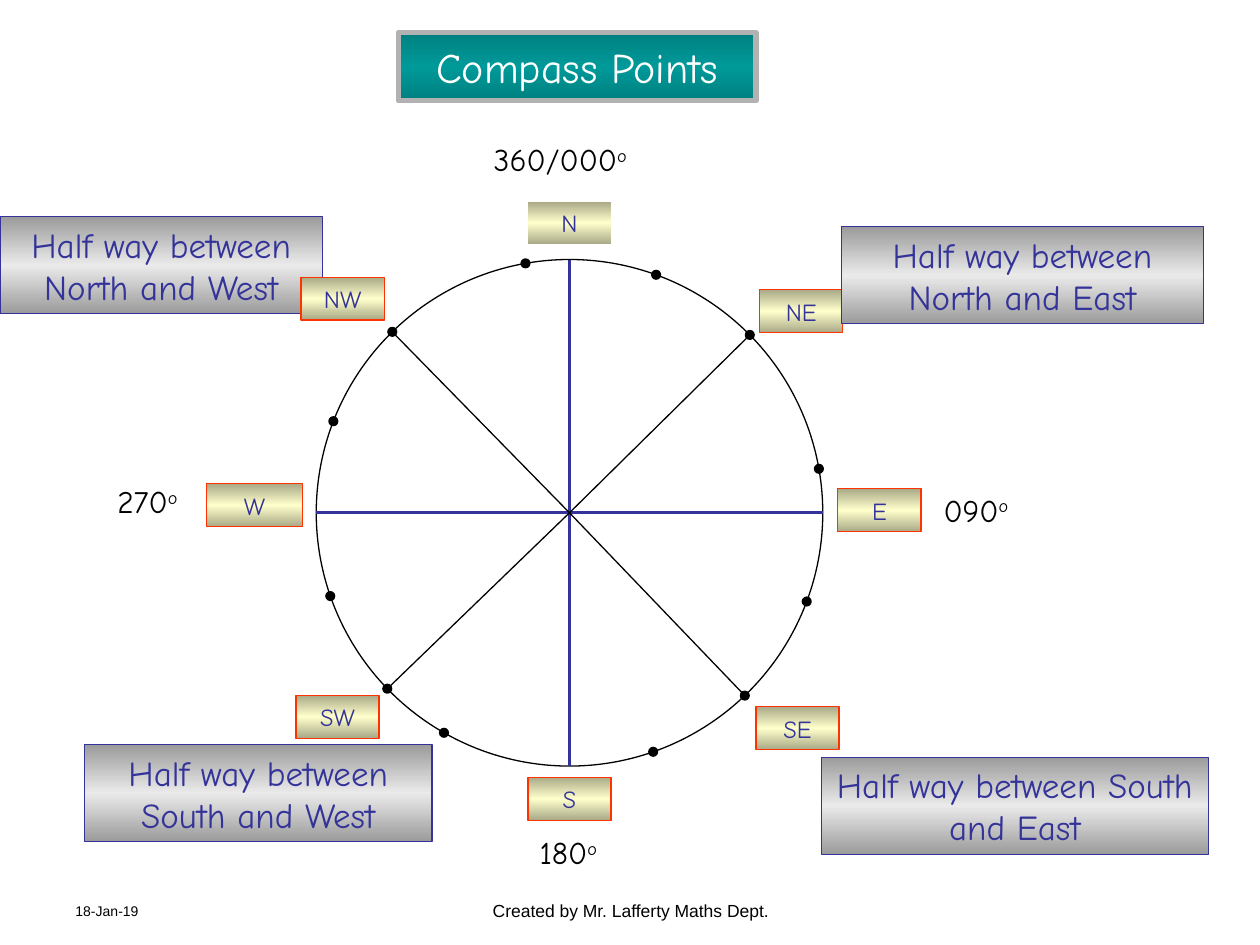
from copy import deepcopy
from math import cos, radians, sin

from lxml import etree
from pptx import Presentation
from pptx.dml.color import RGBColor
from pptx.enum.shapes import MSO_CONNECTOR, MSO_SHAPE
from pptx.enum.text import MSO_ANCHOR, MSO_AUTO_SIZE, PP_ALIGN
from pptx.oxml.ns import qn
from pptx.util import Inches, Pt

LEFT, CENTER = PP_ALIGN.LEFT, PP_ALIGN.CENTER
MIDDLE = MSO_ANCHOR.MIDDLE
NO_FIT = MSO_AUTO_SIZE.NONE
RECT, OVAL = MSO_SHAPE.RECTANGLE, MSO_SHAPE.OVAL
STRAIGHT = MSO_CONNECTOR.STRAIGHT

# Content
TITLE = "Compass Points"
COMIC, PLAIN = "Comic Neue", "Arial"
COLORS = {
    "black": "000000", "white": "FFFFFF", "navy": "333399", "red": "FF3300",
    "frame": "B2B2B2", "teal": "008080", "bright teal": "009999",
    "khaki": "A9A987", "cream": "FFFFCC", "gray": "9B9B9B", "silver": "EAEAEA",
}
# kind: edge colour, middle colour, text size, height
BOX_STYLES = {
    "point": ("khaki", "cream", 14, 0.34),
    "note": ("gray", "silver", 20, 0.77),
}
# kind, text, left, top, width, line colour (back to front)
BOXES = [
    ("point", "N", 4.19, 1.6, 0.66, None),
    ("point", "S", 4.19, 6.17, 0.66, "red"),
    ("point", "E", 6.65, 3.88, 0.66, "red"),
    ("point", "W", 1.64, 3.84, 0.76, "red"),
    ("point", "SE", 6, 5.61, 0.66, "red"),
    ("note", "Half way between South and East", 6.52, 6.01, 3.07, "navy"),
    ("point", "SW", 2.35, 5.52, 0.66, "red"),
    ("note", "Half way between South and West", 0.67, 5.91, 2.76, "navy"),
    ("note", "Half way between North and West", 0, 1.72, 2.56, "navy"),
    ("point", "NW", 2.39, 2.2, 0.66, "red"),
    ("point", "NE", 6.03, 2.3, 0.66, "red"),
    ("note", "Half way between North and East", 6.68, 1.8, 2.87, "navy"),
]
# degrees, left, top, width, alignment
BEARING_LABELS = [
    ("090", 7.39, 3.84, 0.82, LEFT),
    ("360/000", 3.82, 1.06, 1.37, LEFT),
    ("270", 0.76, 3.77, 0.82, CENTER),
    ("180", 4.1, 6.56, 0.82, CENTER),
]
# text, left, width, size, alignment
FOOTERS = [
    ("18-Jan-19", 0.5, 2.33, 8, LEFT),
    ("Created by Mr. Lafferty Maths Dept.", 3.42, 3.17, 10, CENTER),
]

# Compass geometry; bearings run clockwise from north
CENTER_X, CENTER_Y, RADIUS, DOT = 4.52, 4.07, 2.01, 0.07
DIAGONALS = [45.4, 136.2, 226, 315.6]
MINOR_POINTS = [20, 80, 110.5, 160.7, 209.7, 250.8, 291.2, 350]

prs = Presentation()
prs.slide_width, prs.slide_height = Inches(10), Inches(7.5)
slide = prs.slides.add_slide(prs.slide_layouts[5])


def color(name):
    return RGBColor.from_string(COLORS[name])


def inches(*values):
    return [Inches(value) for value in values]


def on_circle(bearing):
    angle = radians(bearing)
    return CENTER_X + RADIUS * sin(angle), CENTER_Y - RADIUS * cos(angle)


def write(shape, runs, size, ink, font=COMIC, align=CENTER):
    """Fill a shape with one paragraph of (text, raised) runs."""
    frame = shape.text_frame
    frame.word_wrap, frame.auto_size = True, NO_FIT
    frame.vertical_anchor = MIDDLE
    paragraph = frame.paragraphs[0]
    paragraph.alignment = align
    for text, raised in runs:
        run = paragraph.add_run()
        run.text = text
        run.font.size, run.font.name = Pt(size), font
        run.font.color.rgb = color(ink)
        if raised:
            run.font._element.set("baseline", "30000")


def set_line(shape, name, width=0.75):
    if name is None:
        shape.line.fill.background()
    else:
        shape.line.color.rgb = color(name)
        shape.line.width = Pt(width)


def banded_fill(shape, edge, middle):
    """Vertical gradient: edge, middle, edge."""
    shape.fill.gradient()
    shape.fill.gradient_angle = 90
    first, second = shape.fill.gradient_stops
    first.position, second.position = 0, 0.5
    first.color.rgb, second.color.rgb = color(edge), color(middle)
    stops = shape._element.spPr.find(qn("a:gradFill")).find(qn("a:gsLst"))
    last = deepcopy(stops[0])
    last.set("pos", "100000")
    stops.append(last)


def add_figure(kind, *box):
    shape = slide.shapes.add_shape(kind, *inches(*box))
    shape.shadow.inherit = False
    return shape


def add_text(runs, box, size, font, align):
    write(slide.shapes.add_textbox(*inches(*box)), runs, size, "black", font, align)


def add_spoke(start, end, name, width):
    spoke = slide.shapes.add_connector(STRAIGHT, *inches(*start, *end))
    set_line(spoke, name, width)
    etree.SubElement(spoke._element.spPr, qn("a:effectLst"))


# Title
title = slide.shapes.title
title.left, title.top, title.width, title.height = inches(3.16, 0.26, 2.84, 0.54)
banded_fill(title, "teal", "bright teal")
set_line(title, "frame", 3)
write(title, [(TITLE, False)], 24, "white")

# Footer
for text, left, width, size, align in FOOTERS:
    add_text([(text, False)], (left, 7.11, width, 0.24), size, PLAIN, align)

# Circle with its main axes
circle = add_figure(OVAL, CENTER_X - RADIUS, CENTER_Y - RADIUS, 2 * RADIUS, 2 * RADIUS)
circle.fill.background()
set_line(circle, "black")
for bearing in (90, 180):
    add_spoke(on_circle(bearing + 180), on_circle(bearing), "navy", 1.5)

# Diagonals and the dots on the circle
for bearing in DIAGONALS:
    add_spoke((CENTER_X, CENTER_Y), on_circle(bearing), "black", 0.75)
for bearing in sorted(DIAGONALS + MINOR_POINTS):
    x, y = on_circle(bearing)
    dot = add_figure(OVAL, x - DOT / 2, y - DOT / 2, DOT, DOT)
    dot.fill.solid()
    dot.fill.fore_color.rgb = color("black")
    set_line(dot, "black")

# Bearings in degrees
for degrees, left, top, width, align in BEARING_LABELS:
    add_text([(degrees, False), ("o", True)], (left, top, width, 0.41), 18, COMIC, align)

# Compass points and their explanations
for kind, text, left, top, width, outline in BOXES:
    edge, middle, size, height = BOX_STYLES[kind]
    box = add_figure(RECT, left, top, width, height)
    banded_fill(box, edge, middle)
    set_line(box, outline)
    write(box, [(text, False)], size, "navy")

prs.save("out.pptx")
